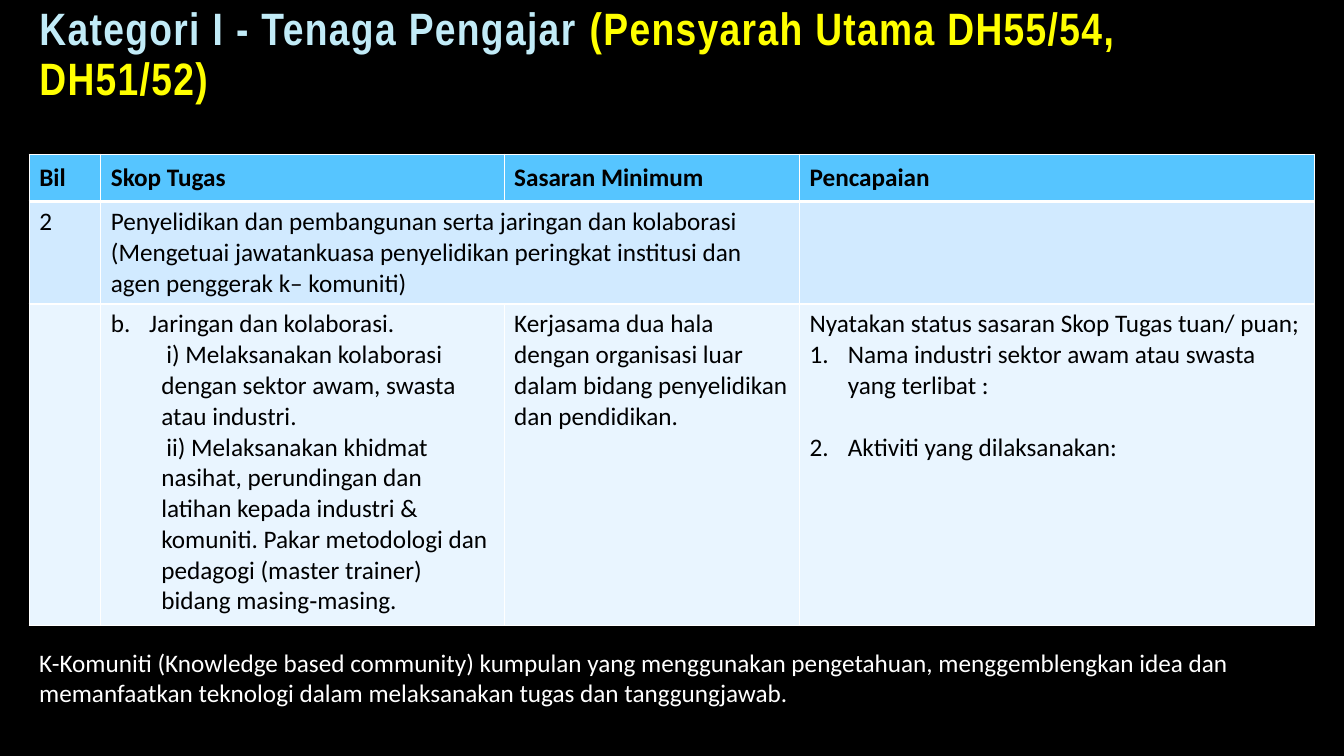
from dataclasses import dataclass

from lxml import etree
from pptx import Presentation
from pptx.dml.color import RGBColor
from pptx.enum.text import MSO_ANCHOR, MSO_AUTO_SIZE, PP_ALIGN
from pptx.oxml.ns import qn
from pptx.util import Pt

PX = 9144  # EMU per px, 100 px to the inch
TOP, MIDDLE, BOTTOM = MSO_ANCHOR.TOP, MSO_ANCHOR.MIDDLE, MSO_ANCHOR.BOTTOM
LEFT = PP_ALIGN.LEFT
FIXED, GROW = MSO_AUTO_SIZE.NONE, MSO_AUTO_SIZE.SHAPE_TO_FIT_TEXT


@dataclass(frozen=True)
class Theme:
    back: str = "000000"
    ink: str = "000000"
    light: str = "FFFFFF"
    title: str = "C1EBF7"
    accent: str = "FFFF00"
    edge: str = "404040"
    rows: tuple = ("56C5FF", "D1EAFF", "E9F5FF")
    head_font: str = "Arial Narrow"
    body_font: str = "Calibri"
    head_size: float = 32.4
    body_size: float = 18


def add(parent, tag, **attrs):
    node = etree.SubElement(parent, qn(tag))
    for key, val in attrs.items():
        node.set(key, str(val))
    return node


def line(parent, tag, color, width, alpha=None):
    """Add a solid line element; width in points."""
    node = add(parent, tag, w=Pt(width))
    tint = add(add(node, "a:solidFill"), "a:srgbClr", val=color)
    if alpha:
        add(tint, "a:alpha", val=alpha * 1000)
    add(node, "a:prstDash", val="solid")
    return node


def write(para, text, *, font, size, color, bold=False, level=0, left=0,
          first=0, mark=None, start=1, after=0):
    """Add a formatted run, with indents in px and an optional number scheme."""
    props = para._p.get_or_add_pPr()
    if left:
        props.set("marL", str(left * PX))
        props.set("indent", str(first * PX))
    if mark:
        add(props, "a:buAutoNum", type=mark, startAt=start)
    para.level = level
    if after:
        para.space_after = Pt(after)
    run = para.add_run()
    run.text = text
    face = run.font
    face.name, face.size, face.bold = font, Pt(size), bold
    face.color.rgb = RGBColor.from_string(color)
    return run


class Deck:
    def __init__(self, theme, width, height):
        self.theme = theme
        self.show = Presentation()
        self.show.slide_width, self.show.slide_height = width * PX, height * PX
        self.slide = self.show.slides.add_slide(self.show.slide_layouts[5])
        fill = self.slide.background.fill
        fill.solid()
        fill.fore_color.rgb = RGBColor.from_string(theme.back)

    def body(self, para, text, **form):
        look = self.theme
        base = dict(font=look.body_font, size=look.body_size, color=look.ink)
        return write(para, text, **{**base, **form})

    def title(self, box, parts):
        look = self.theme
        shape = self.slide.shapes.title
        shape.left, shape.top, shape.width, shape.height = (v * PX for v in box)
        frame = shape.text_frame
        frame.word_wrap, frame.auto_size = True, FIXED
        frame.vertical_anchor = BOTTOM
        para = frame.paragraphs[0]
        para.alignment, para.line_spacing = LEFT, 0.9
        for text, color in parts:
            run = write(para, text, font=look.head_font, size=look.head_size,
                        color=color, bold=True)
            props = run._r.get_or_add_rPr()
            props.set("spc", "100")
            props.insert(0, line(props, "a:ln", look.edge, 0.75, alpha=10))

    def note(self, box, text):
        frame = self.slide.shapes.add_textbox(*(v * PX for v in box)).text_frame
        frame.word_wrap, frame.auto_size = True, GROW
        self.body(frame.paragraphs[0], text, color=self.theme.light)

    def cell(self, cell, row, items):
        """Fill one cell with (text, format) items and draw its borders."""
        look = self.theme
        cell.vertical_anchor = TOP if row else MIDDLE
        frame = cell.text_frame
        for i, (text, form) in enumerate(items):
            para = frame.add_paragraph() if i else frame.paragraphs[0]
            self.body(para, text, bold=row == 0, **form)
        props = cell._tc.get_or_add_tcPr()
        widths = dict(L=1, R=1, T=3 if row == 1 else 1, B=1 if row else 3)
        for side, width in widths.items():
            line(props, f"a:ln{side}", look.light, width)
        cell.fill.solid()
        cell.fill.fore_color.rgb = RGBColor.from_string(look.rows[row])

    def table(self, left, top, cols, rows, cells):
        grid = self.slide.shapes.add_table(
            len(rows), len(cols), left * PX, top * PX,
            sum(cols) * PX, sum(rows) * PX).table
        for col, width in zip(grid.columns, cols):
            col.width = width * PX
        for r, height in enumerate(rows):
            grid.rows[r].height = height * PX
            for c, items in enumerate(cells[r]):
                self.cell(grid.cell(r, c), r, items)
        return grid


def plain(text):
    return [(text, {})]


def main():
    theme = Theme()
    deck = Deck(theme, 1333, 750)
    deck.title((29, 42, 1137, 67), [
        ("Kategori I - Tenaga Pengajar ", theme.title),
        ("(Pensyarah Utama DH55/54, DH51/52)", theme.accent),
    ])

    sub = dict(level=1, left=50, first=5)
    item = dict(left=38, first=-38, mark="arabicPeriod")
    heads = ["Bil", "Skop Tugas", "Sasaran Minimum", "Pencapaian"]
    scope = ("Penyelidikan dan pembangunan serta jaringan dan kolaborasi "
             "(Mengetuai jawatankuasa penyelidikan peringkat institusi dan "
             "agen penggerak k– komuniti)")
    tasks = [
        ("Jaringan dan kolaborasi.",
         dict(left=38, first=-38, mark="alphaLcPeriod", start=2)),
        ("i) Melaksanakan kolaborasi dengan sektor awam, swasta atau industri.",
         sub),
        ("ii) Melaksanakan khidmat nasihat, perundingan dan latihan kepada "
         "industri & komuniti. Pakar metodologi dan pedagogi (master trainer) "
         "bidang masing‐masing.", sub),
    ]
    target = ("Kerjasama dua hala dengan organisasi luar dalam bidang "
              "penyelidikan dan pendidikan.")
    status = [
        ("Nyatakan status sasaran Skop Tugas tuan/ puan;", {}),
        ("Nama industri sektor awam atau swasta yang terlibat :",
         dict(item, after=22)),
        ("Aktiviti yang dilaksanakan:", item),
    ]
    grid = deck.table(29, 153, [71, 400, 293, 511], [47, 101, 319], [
        [plain(head) for head in heads],
        [plain("2"), plain(scope), [], []],
        [[], tasks, plain(target), status],
    ])
    grid.cell(1, 1).merge(grid.cell(1, 2))

    deck.note((29, 637, 1242, 71),
              "K-Komuniti (Knowledge based community) kumpulan yang menggunakan "
              "pengetahuan, menggemblengkan idea dan memanfaatkan teknologi "
              "dalam melaksanakan tugas dan tanggungjawab.")
    deck.show.save("out.pptx")


if __name__ == "__main__":
    main()
